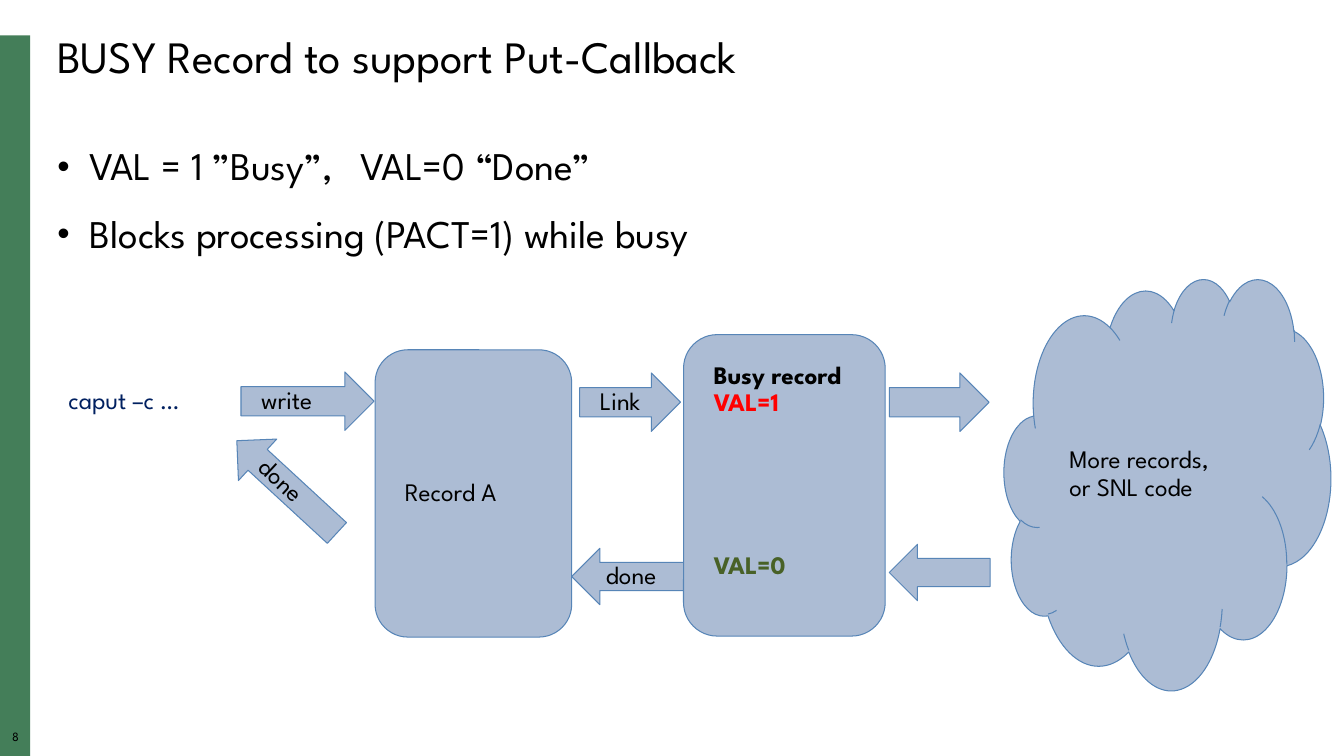
from lxml import etree
from pptx import Presentation
from pptx.dml.color import RGBColor
from pptx.enum.shapes import MSO_SHAPE
from pptx.enum.text import MSO_ANCHOR, PP_ALIGN
from pptx.oxml.ns import qn
from pptx.util import Inches, Pt

FONT = "League Spartan"
BLACK = RGBColor(0x00, 0x00, 0x00)
NAVY = RGBColor(0x00, 0x20, 0x60)
RED = RGBColor(0xFF, 0x00, 0x00)
OLIVE = RGBColor(0x48, 0x61, 0x27)
GREEN = RGBColor(0x44, 0x7E, 0x59)
PALE_BLUE = RGBColor(0xAC, 0xBC, 0xD4)
EDGE_BLUE = RGBColor(0x57, 0x85, 0xB7)

TITLE = "BUSY Record to support Put-Callback"
# Each bullet is a list of phrases, set apart by a wide space.
BULLETS = [
    ["VAL = 1 ”Busy”,", "VAL=0 “Done”"],
    ["Blocks processing (PACT=1) while busy"],
]
COMMAND = "caput –c …"
PAGE_NUMBER = "8"

# Preset, (left, top, width, height), rotation, lines of text; back to front
LEFT, RIGHT = MSO_SHAPE.LEFT_ARROW, MSO_SHAPE.RIGHT_ARROW
BLOCK, CLOUD = MSO_SHAPE.ROUNDED_RECTANGLE, MSO_SHAPE.CLOUD
BUSY_BLOCK = (6.78, 3.32, 2, 2.99)
FLOW = [
    (LEFT, (5.67, 5.44, 1.2, 0.56), 0, ["done"]),
    (BLOCK, BUSY_BLOCK, 0, []),
    (BLOCK, (3.72, 3.47, 1.95, 2.85), 0, ["Record A"]),
    (RIGHT, (2.39, 3.69, 1.32, 0.58), 0, ["write"]),
    (RIGHT, (5.75, 3.7, 1, 0.58), 0, ["Link"]),
    (LEFT, (2.17, 4.55, 1.35, 0.56), 42.7, ["done"]),
    (RIGHT, (8.82, 3.7, 0.99, 0.58), 0, []),
    (LEFT, (8.82, 5.4, 1, 0.56), 0, []),
    (CLOUD, (9.96, 2.76, 3.24, 4.08), 0, ["More records,", "or SNL code"]),
]
# Text, colour, points of space before
BUSY_STATES = [("Busy record", BLACK, 0), ("VAL=1", RED, 0), ("VAL=0", OLIVE, 97)]


def style(para, size, color=BLACK, bold=False, align=PP_ALIGN.LEFT):
    para.alignment = align
    para.line_spacing = 0.9
    font = para.font
    font.name, font.size, font.bold = FONT, Pt(size), bold
    font.color.rgb = color


def next_paragraph(frame, index):
    return frame.paragraphs[0] if index == 0 else frame.add_paragraph()


def set_margins(frame, inches):
    frame.margin_left = frame.margin_right = Inches(inches)
    frame.margin_top = frame.margin_bottom = Inches(inches)


def add_text_box(page, place, wrap=True):
    frame = page.shapes.add_textbox(*map(Inches, place)).text_frame
    frame.word_wrap = wrap
    return frame


def add_label(page, place, text, size, color=BLACK, wrap=True):
    frame = add_text_box(page, place, wrap)
    frame.text = text
    style(frame.paragraphs[0], size, color)
    return frame


def add_bullet(para):
    """Give the paragraph a hanging round bullet."""
    props = para._p.get_or_add_pPr()
    props.set("marL", str(Inches(0.32)))
    props.set("indent", str(-Inches(0.32)))
    color = etree.SubElement(props, qn("a:buClr"))
    etree.SubElement(color, qn("a:srgbClr"), val=str(BLACK))
    etree.SubElement(props, qn("a:buSzPct"), val="90000")
    etree.SubElement(props, qn("a:buFont"), typeface="Arial")
    etree.SubElement(props, qn("a:buChar"), char="•")


def add_bullets(page):
    frame = add_text_box(page, (0.47, 1.41, 12.5, 1.45))
    for index, phrases in enumerate(BULLETS):
        para = next_paragraph(frame, index)
        add_bullet(para)
        style(para, 28)
        if index:
            para.space_before = Pt(18)
        for position, phrase in enumerate(phrases):
            if position:
                gap = para.add_run()
                gap.text = " "
                gap._r.get_or_add_rPr().set("spc", "1300")
            para.add_run().text = phrase


def add_flow_shape(page, preset, place, rotation, lines):
    shape = page.shapes.add_shape(preset, *map(Inches, place))
    shape.rotation = rotation
    shape.shadow.inherit = False
    shape.fill.solid()
    shape.fill.fore_color.rgb = PALE_BLUE
    shape.line.color.rgb = EDGE_BLUE
    shape.line.width = Pt(0.75)
    frame = shape.text_frame
    set_margins(frame, 0.2)
    frame.vertical_anchor = MSO_ANCHOR.MIDDLE
    for index, line in enumerate(lines):
        para = next_paragraph(frame, index)
        para.text = line
        style(para, 18)
    return shape


def add_busy_states(shape):
    frame = shape.text_frame
    frame.vertical_anchor = MSO_ANCHOR.TOP
    frame.margin_top = Inches(0.18)
    for index, (text, color, space) in enumerate(BUSY_STATES):
        para = next_paragraph(frame, index)
        para.text = text
        style(para, 18, color, bold=True)
        if space:
            para.space_before = Pt(space)


def main():
    deck = Presentation()
    deck.slide_width, deck.slide_height = Inches(13.33), Inches(7.5)
    page = deck.slides.add_slide(deck.slide_layouts[6])

    band = page.shapes.add_shape(
        MSO_SHAPE.RECTANGLE, *map(Inches, (0, 0.35, 0.3, 7.15)))
    band.shadow.inherit = False
    band.fill.solid()
    band.fill.fore_color.rgb = GREEN
    band.line.fill.background()

    number = add_label(page, (0, 7.25, 0.31, 0.17), PAGE_NUMBER, 9)
    set_margins(number, 0)
    number.paragraphs[0].alignment = PP_ALIGN.CENTER

    add_label(page, (0.47, 0.3, 12.5, 0.59), TITLE, 32)
    add_bullets(page)
    add_label(page, (0.58, 3.8, 1.63, 0.37), COMMAND, 18, NAVY, wrap=False)

    for preset, place, rotation, lines in FLOW:
        shape = add_flow_shape(page, preset, place, rotation, lines)
        if place == BUSY_BLOCK:
            add_busy_states(shape)

    deck.save("out.pptx")


if __name__ == "__main__":
    main()
